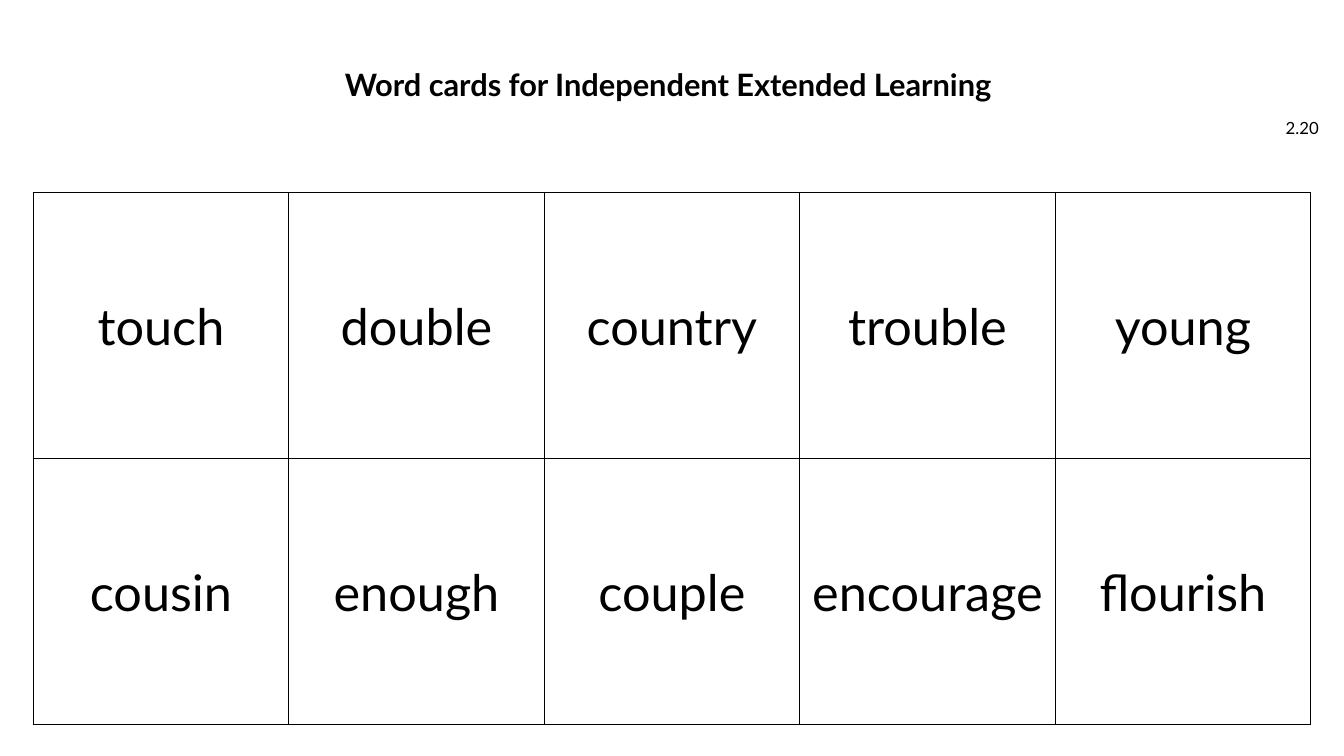
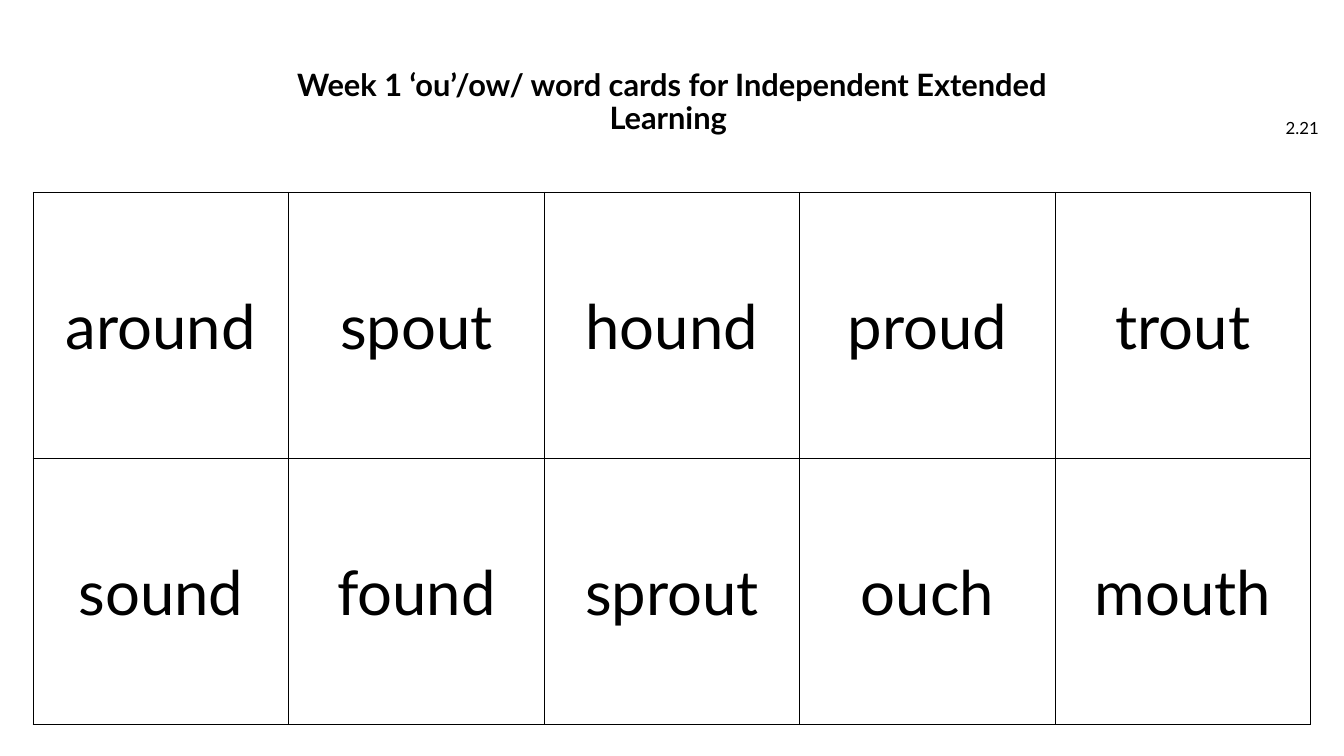
from lxml.etree import SubElement
from pptx import Presentation
from pptx.dml.color import RGBColor
from pptx.enum.text import MSO_ANCHOR, MSO_AUTO_SIZE, PP_ALIGN
from pptx.oxml.ns import qn
from pptx.util import Pt

PX = 9144
SLIDE_W, SLIDE_H = 1333, 750
FONT = "Lato"
COLORS = {"ink": "000000", "paper": "FFFFFF"}
TITLE_BOX = (231, 64, 871, 35)
NUMBER_BOX = (1255, 107, 63, 40)
CARDS_BOX = (33, 191, 1267, 528)

SLIDES = [
    ("Word cards for Independent Extended Learning ", "2.20", 36,
     [["touch", "double", "country", "trouble", "young"],
      ["cousin", "enough", "couple", "encourage", "flourish"]]),
    ("Week 1 ‘ou’/ow/ word cards for Independent Extended Learning ", "2.21", 44,
     [["around", "spout", "hound", "proud", "trout"],
      ["sound", "found", "sprout", "ouch", "mouth"]]),
]


def emu(box):
    """Turn a box in px into EMU."""
    return [v * PX for v in box]


def write(tf, text, size, align, bold=False):
    """Put one formatted paragraph into a text frame."""
    tf.text = text
    p = tf.paragraphs[0]
    p.alignment = align
    font = p.runs[0].font
    font.name, font.size, font.bold = FONT, Pt(size), bold
    font.color.rgb = RGBColor.from_string(COLORS["ink"])
    return p


def add_title(slide, box, text):
    """Move the title placeholder into the box and fill it."""
    sp = slide.shapes.title
    sp.left, sp.top, sp.width, sp.height = emu(box)
    tf = sp.text_frame
    tf.word_wrap = True
    tf.auto_size = MSO_AUTO_SIZE.NONE
    tf.vertical_anchor = MSO_ANCHOR.TOP
    p = write(tf, text, 22, PP_ALIGN.CENTER, bold=True)
    p.line_spacing = 0.9


def add_number(slide, box, text):
    """Add the page number, right-aligned in the box."""
    tf = slide.shapes.add_textbox(*emu(box)).text_frame
    tf.word_wrap = True
    tf.vertical_anchor = MSO_ANCHOR.MIDDLE
    write(tf, text, 12, PP_ALIGN.RIGHT)


def set_borders(cell):
    """Draw a thin line on all four sides of a cell."""
    tcPr = cell._tc.get_or_add_tcPr()
    for side in ("lnL", "lnR", "lnT", "lnB"):
        ln = SubElement(tcPr, qn(f"a:{side}"), w=str(Pt(1)))
        fill = SubElement(ln, qn("a:solidFill"))
        SubElement(fill, qn("a:srgbClr"), val=COLORS["ink"])


def add_cards(slide, box, words, size):
    """Add a table of equal word cards that fills the box."""
    x, y, w, h = emu(box)
    table = slide.shapes.add_table(len(words), len(words[0]), x, y, w, h).table
    table.first_row = table.horz_banding = False
    for row, texts in zip(table.rows, words):
        for cell, text in zip(row.cells, texts):
            set_borders(cell)
            cell.fill.solid()
            cell.fill.fore_color.rgb = RGBColor.from_string(COLORS["paper"])
            cell.vertical_anchor = MSO_ANCHOR.MIDDLE
            write(cell.text_frame, text, size, PP_ALIGN.CENTER)


def add_card_slide(prs, title, number, size, words):
    """Add one slide of word cards."""
    slide = prs.slides.add_slide(prs.slide_layouts[5])
    add_title(slide, TITLE_BOX, title)
    add_number(slide, NUMBER_BOX, number)
    add_cards(slide, CARDS_BOX, words, size)


def main():
    """Build and save the presentation."""
    prs = Presentation()
    prs.slide_width, prs.slide_height = emu((SLIDE_W, SLIDE_H))
    for content in SLIDES:
        add_card_slide(prs, *content)
    prs.save("out.pptx")


if __name__ == "__main__":
    main()
